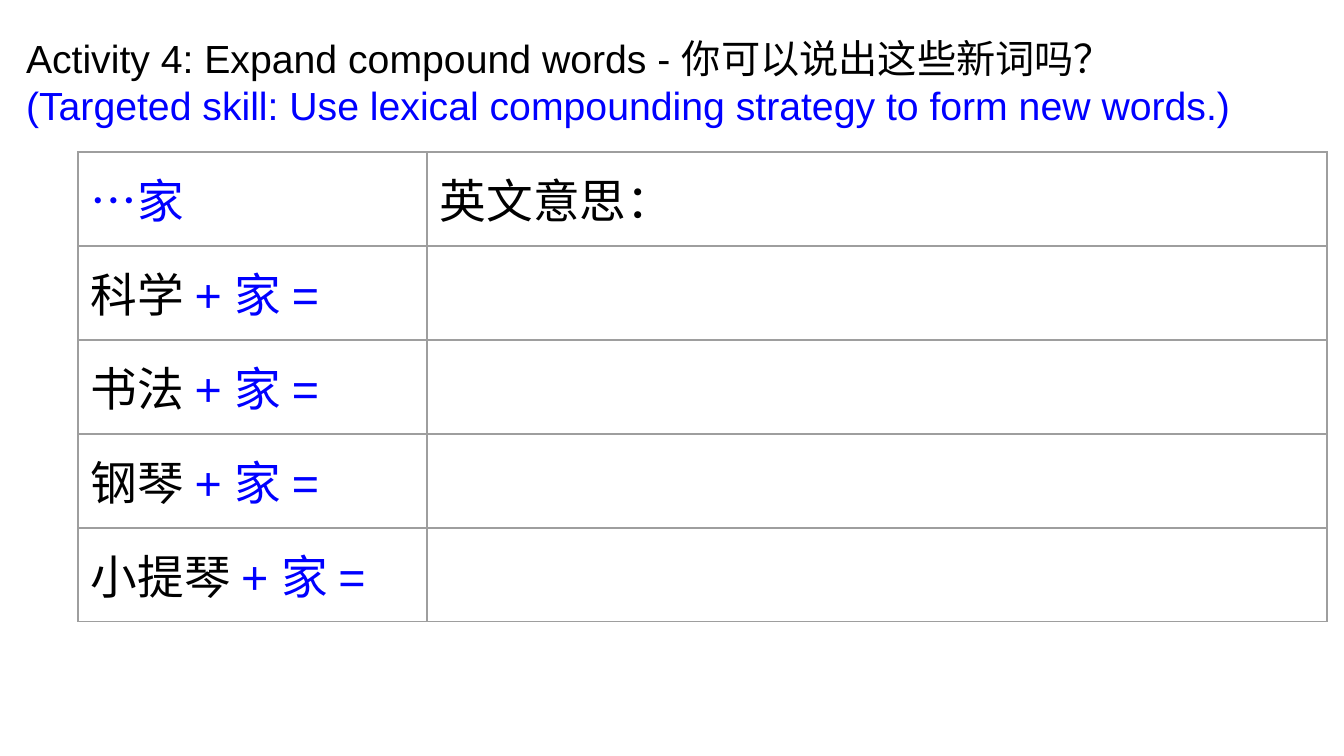
"""Build a slide with a compound-word activity and its answer table."""
from lxml import etree
from pptx import Presentation, util as u
from pptx.dml.color import RGBColor
from pptx.enum import text
from pptx.oxml import ns

PX = 914400 / 134.4
BLACK = RGBColor(0x00, 0x00, 0x00)
BLUE = RGBColor(0x00, 0x00, 0xFF)
BORDER = "9E9E9E"
MARGIN = 13
ROW_HEIGHT = 94
COLUMN_WIDTHS = [349, 900]


def px(length):
    return u.Emu(round(length * PX))


def add_text(paragraph, words, size, color):
    run = paragraph.add_run()
    run.text = words
    run.font.name = "Arial"
    run.font.size = u.Pt(size)
    run.font.color.rgb = color


presentation = Presentation()
presentation.slide_width = px(1344)
presentation.slide_height = px(756)
slide = presentation.slides.add_slide(presentation.slide_layouts[6])

title = slide.shapes.add_textbox(px(13), px(12), px(1314), px(129))
frame = title.text_frame
frame.word_wrap = True
frame.vertical_anchor = text.MSO_ANCHOR.BOTTOM
frame.margin_left = frame.margin_right = px(MARGIN)
frame.margin_top = frame.margin_bottom = px(MARGIN)
add_text(frame.paragraphs[0], "Activity 4: Expand compound words - 你可以说出这些新词吗？", 21, BLACK)
add_text(frame.add_paragraph(), "(Targeted skill: Use lexical compounding strategy to form new words.)", 21, BLUE)

words = ["科学", "书法", "钢琴", "小提琴"]
rows = [[[("…家", BLUE)], [("英文意思：", BLACK)]]]
rows += [[[(word, BLACK), (" + 家 =", BLUE)], []] for word in words]

table = slide.shapes.add_table(
    len(rows), len(COLUMN_WIDTHS), px(78), px(152), px(sum(COLUMN_WIDTHS)), px(ROW_HEIGHT * len(rows))
).table
table.first_row = False
table.horz_banding = False
for column, width in zip(table.columns, COLUMN_WIDTHS):
    column.width = px(width)

for row_index, row in enumerate(rows):
    table.rows[row_index].height = px(ROW_HEIGHT)
    for column_index, parts in enumerate(row):
        cell = table.cell(row_index, column_index)
        cell.margin_left = cell.margin_right = px(MARGIN)
        cell.margin_top = cell.margin_bottom = px(MARGIN)
        properties = cell._tc.get_or_add_tcPr()
        for side in ("lnL", "lnR", "lnT", "lnB"):
            line = etree.SubElement(properties, ns.qn(f"a:{side}"), w=str(u.Pt(0.75)))
            fill = etree.SubElement(line, ns.qn("a:solidFill"))
            etree.SubElement(fill, ns.qn("a:srgbClr"), val=BORDER)
        cell.fill.background()
        for words_shown, color in parts:
            add_text(cell.text_frame.paragraphs[0], words_shown, 25, color)

presentation.save("out.pptx")
